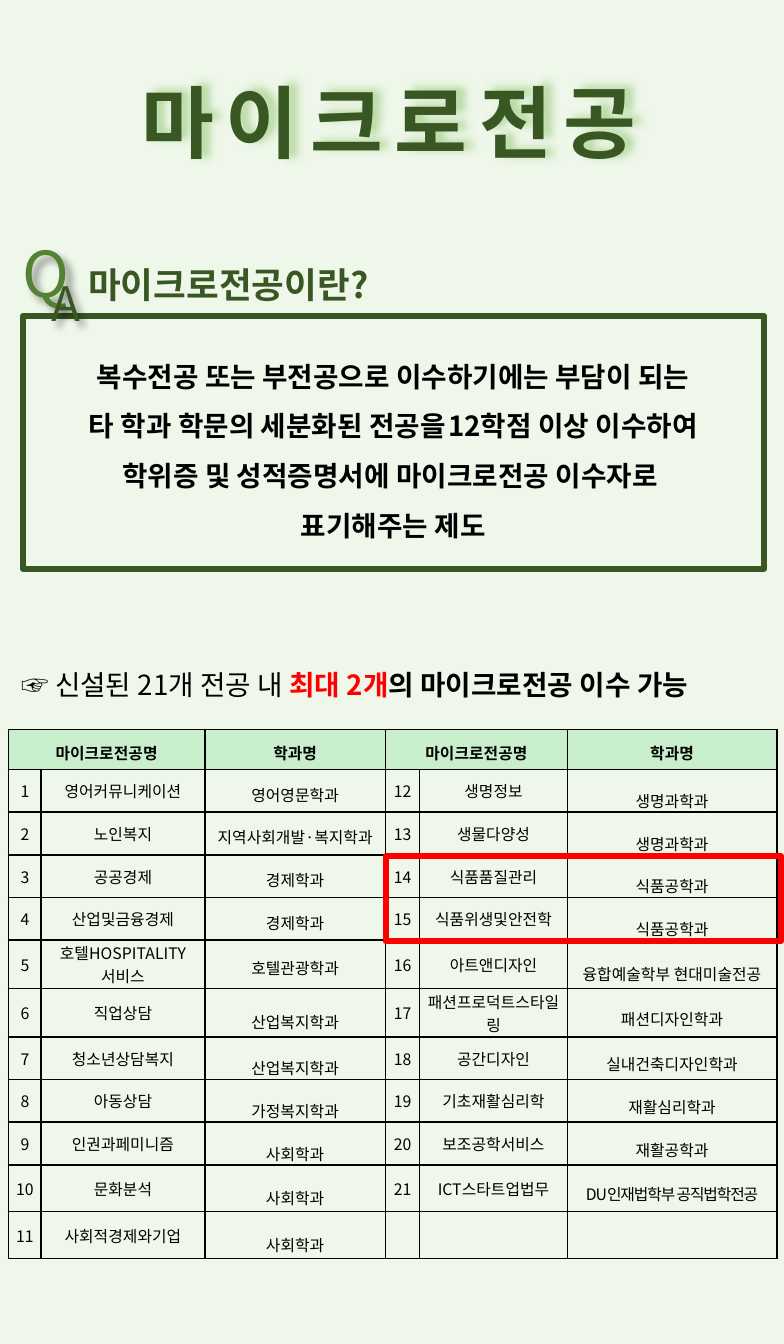
from lxml import etree
from pptx import Presentation
from pptx.dml.color import RGBColor
from pptx.enum.shapes import MSO_SHAPE
from pptx.enum.text import MSO_ANCHOR, MSO_AUTO_SIZE, PP_ALIGN
from pptx.oxml.ns import qn
from pptx.util import Inches, Pt

RECT = MSO_SHAPE.RECTANGLE
TOP, MIDDLE = MSO_ANCHOR.TOP, MSO_ANCHOR.MIDDLE
LEFT, CENTER, JUSTIFY = PP_ALIGN.LEFT, PP_ALIGN.CENTER, PP_ALIGN.JUSTIFY
GROW = MSO_AUTO_SIZE.SHAPE_TO_FIT_TEXT

FACE = "Noto Sans CJK KR"
PALE = RGBColor(0xEE, 0xF7, 0xE9)
MINT = RGBColor(0xC9, 0xEE, 0xCC)
GREEN = RGBColor(0x54, 0x82, 0x35)
DARK = RGBColor(0x38, 0x57, 0x23)
GLOW = RGBColor(0xA9, 0xD1, 0x8E)
BLACK = RGBColor(0, 0, 0)
RED = RGBColor(0xFF, 0, 0)

INTRO = [
    "복수전공 또는 부전공으로 이수하기에는 부담이 되는",
    [" 타 학과 학문의 세분화된 전공을", " ", "12학점 이상 이수하여 "],
    "학위증 및 성적증명서에 마이크로전공 이수자로 ",
    "표기해주는 제도",
]
COLS = [0.23, 1.15, 1.27, 0.24, 1.04, 1.47]
ROWS = [0.28] + [0.3] * 4 + [0.34] * 2 + [0.3] * 3 + [0.33] * 2
HEADS = ["마이크로전공명", "", "학과명"] * 2
MAJORS = [
    ("영어커뮤니케이션", "영어영문학과"),
    ("노인복지", "지역사회개발·복지학과"),
    ("공공경제", "경제학과"),
    ("산업및금융경제", "경제학과"),
    ("호텔HOSPITALITY\n서비스", "호텔관광학과"),
    ("직업상담", "산업복지학과"),
    ("청소년상담복지", "산업복지학과"),
    ("아동상담", "가정복지학과"),
    ("인권과페미니즘", "사회학과"),
    ("문화분석", "사회학과"),
    ("사회적경제와기업", "사회학과"),
    ("생명정보", "생명과학과"),
    ("생물다양성", "생명과학과"),
    ("식품품질관리", "식품공학과"),
    ("식품위생및안전학", "식품공학과"),
    ("아트앤디자인", "융합예술학부 현대미술전공"),
    ("패션프로덕트스타일링", "패션디자인학과"),
    ("공간디자인", "실내건축디자인학과"),
    ("기초재활심리학", "재활심리학과"),
    ("보조공학서비스", "재활공학과"),
    ("ICT스타트업법무", "DU인재법학부 공직법학전공"),
]
HALF = 11


def style(para, size, color=BLACK, bold=False, align=CENTER, space=None, gap=0):
    para.alignment = align
    if space:
        para.line_spacing = space
    font = para.font
    font.name, font.size, font.bold = FACE, Pt(size), bold
    font.color.rgb = color
    props = para._p.pPr.find(qn("a:defRPr"))
    etree.SubElement(props, qn("a:ea"), typeface=FACE)
    if gap:
        props.set("spc", str(round(gap * 100)))


def place(shape, left, top, width, height):
    shape.left, shape.top = Inches(left), Inches(top)
    shape.width, shape.height = Inches(width), Inches(height)


def add_label(slide, box, text, size, color, **look):
    label = slide.shapes.add_textbox(*map(Inches, box))
    frame = label.text_frame
    frame.word_wrap = True
    frame.auto_size = GROW
    frame.text = text
    style(frame.paragraphs[0], size, color, **look)
    return label


def add_shade(shape, color, angle, alpha):
    shape.shadow.inherit = False
    effects = shape._element.spPr.find(qn("a:effectLst"))
    shade = etree.SubElement(effects, qn("a:outerShdw"), blurRad="50800",
                             dist="50800", dir=str(angle * 60000))
    tint = etree.SubElement(shade, qn("a:srgbClr"), val=str(color))
    etree.SubElement(tint, qn("a:alpha"), val=str(alpha * 1000))


def add_frame(slide, box, color, width, fill=None):
    frame = slide.shapes.add_shape(RECT, *map(Inches, box))
    frame.shadow.inherit = False
    if fill:
        frame.fill.solid()
        frame.fill.fore_color.rgb = fill
    else:
        frame.fill.background()
    frame.line.color.rgb = color
    frame.line.width = Pt(width)
    return frame


def add_edges(cell):
    props = cell._tc.get_or_add_tcPr()
    for spot, side in enumerate(("lnL", "lnR", "lnT", "lnB")):
        edge = etree.Element(qn("a:" + side), w=str(Pt(1)))
        fill = etree.SubElement(edge, qn("a:solidFill"))
        etree.SubElement(fill, qn("a:srgbClr"), val=str(BLACK))
        props.insert(spot, edge)


def fill_cell(cell, text, space=None, head=False, gap=0):
    cell.text = text
    cell.vertical_anchor = MIDDLE
    cell.margin_left = cell.margin_right = Inches(0.05)
    cell.margin_top = cell.margin_bottom = Inches(0.01)
    for para in cell.text_frame.paragraphs:
        style(para, 8, bold=head, space=space, gap=gap)
        if not text:
            etree.SubElement(para._p, qn("a:endParaRPr"), sz="800")
    if head:
        cell.fill.solid()
        cell.fill.fore_color.rgb = MINT
    else:
        cell.fill.background()
    add_edges(cell)


def add_majors(slide):
    box = map(Inches, (0.06, 5.13, sum(COLS), sum(ROWS)))
    table = slide.shapes.add_table(len(ROWS), len(COLS), *box).table
    table.first_row = table.horz_banding = False
    for col, width in zip(table.columns, COLS):
        col.width = Inches(width)
    for row, height in zip(table.rows, ROWS):
        row.height = Inches(height)
    for col, text in enumerate(HEADS):
        fill_cell(table.cell(0, col), text, 1.3, head=True)
    for col in (0, 3):
        table.cell(0, col).merge(table.cell(0, col + 1))
    # Two halves side by side, the last place on the right is empty
    for index in range(2 * HALF):
        side, line = divmod(index, HALF)
        row, col = line + 1, side * 3
        known = index < len(MAJORS)
        major, dept = MAJORS[index] if known else ("", "")
        early, late = ((1.3, 1.8), (1.8, 1.5))[side]
        fill_cell(table.cell(row, col), str(index + 1) if known else "")
        fill_cell(table.cell(row, col + 1), major)
        fill_cell(table.cell(row, col + 2), dept, early if row <= 5 else late,
                  gap=-0.6 if dept.startswith("DU") else 0)


def add_title(slide):
    title = slide.shapes.title
    place(title, -0.02, 0.47, 5.51, 0.77)
    frame = title.text_frame
    frame.text = "마이크로전공"
    frame.vertical_anchor = TOP
    frame.auto_size = GROW
    style(frame.paragraphs[0], 40, DARK, bold=True, gap=6)
    add_shade(title, GLOW, 330, 80)


def add_intro(slide):
    frame = add_frame(slide, (0.16, 2.22, 5.21, 1.78), DARK, 2.83, PALE).text_frame
    frame.word_wrap = True
    frame.vertical_anchor = MIDDLE
    for index, line in enumerate(INTRO):
        para = frame.add_paragraph() if index else frame.paragraphs[0]
        style(para, 14, bold=True, space=1.5)
        for text in [line] if isinstance(line, str) else line:
            run = para.add_run()
            run.text = text
            if text == " ":
                run.font.size = Pt(5)


def add_limit(slide):
    label = add_label(slide, (0.05, 4.65, 5.51, 0.34), "☞ 신설된 21개 전공 내 ",
                      14, BLACK, align=JUSTIFY)
    para = label.text_frame.paragraphs[0]
    for text, color in (("최대 2개", RED), ("의 마이크로전공 이수 가능", BLACK)):
        run = para.add_run()
        run.text = text
        run.font.bold = True
        run.font.color.rgb = color


def main():
    deck = Presentation()
    deck.slide_width, deck.slide_height = Inches(5.51), Inches(9.45)
    slide = deck.slides.add_slide(deck.slide_layouts[5])
    slide.background.fill.solid()
    slide.background.fill.fore_color.rgb = PALE

    # Title and definition
    add_title(slide)
    add_intro(slide)

    # Table with the marked majors
    add_majors(slide)
    add_frame(slide, (2.71, 6.02, 2.78, 0.6), RED, 3)

    # Question heading
    ask = add_label(slide, (0.62, 1.85, 2.48, 0.35), "마이크로전공이란?",
                    18, DARK, bold=True, align=LEFT).text_frame
    ask.word_wrap = False
    ask.auto_size = MSO_AUTO_SIZE.NONE
    ask.margin_left = ask.margin_right = ask.margin_top = ask.margin_bottom = 0
    for box, text, size, color in (((0.06, 1.6, 0.48, 0.64), "Q", 32, GREEN),
                                   ((0.22, 1.88, 0.48, 0.5), "A", 24, DARK)):
        add_shade(add_label(slide, box, text, size, color, gap=0.4), BLACK, 45, 40)

    # Limit on majors
    add_limit(slide)
    deck.save("out.pptx")


if __name__ == "__main__":
    main()
